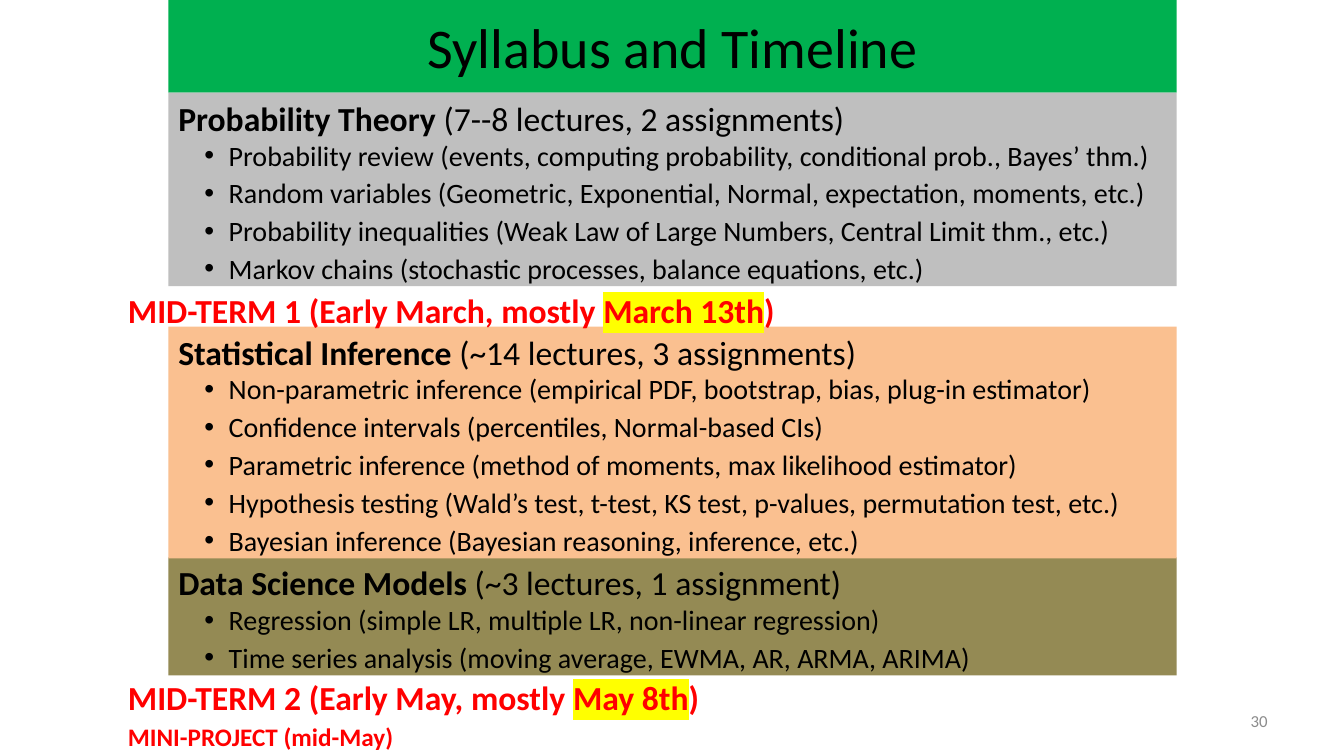
from lxml import etree
from pptx import Presentation
from pptx.dml.color import RGBColor
from pptx.enum.shapes import MSO_SHAPE
from pptx.enum.text import MSO_ANCHOR, MSO_AUTO_SIZE, PP_ALIGN
from pptx.oxml.ns import qn
from pptx.util import Inches, Pt

FONT = "Calibri"
LEFT, WIDTH = 1.67, 10

UNITS = [
    ((LEFT, 0.92, WIDTH, 1.92), "BFBFBF",
     "Probability Theory ", "(7--8 lectures, 2 assignments)", [
         "Probability review (events, computing probability, conditional prob., Bayes’ thm.)",
         "Random variables (Geometric, Exponential, Normal, expectation, moments, etc.)",
         "Probability inequalities (Weak Law of Large Numbers, Central Limit thm., etc.)",
         "Markov chains (stochastic processes, balance equations, etc.)"]),
    ((LEFT, 3.24, WIDTH, 2.3), "FAC090",
     "Statistical Inference", " (~14 lectures, 3 assignments)", [
         "Non-parametric inference (empirical PDF, bootstrap, bias, plug-in estimator)",
         "Confidence intervals (percentiles, Normal-based CIs)",
         "Parametric inference (method of moments, max likelihood estimator)",
         "Hypothesis testing (Wald’s test, t-test, KS test, p-values, permutation test, etc.)",
         "Bayesian inference (Bayesian reasoning, inference, etc.)"]),
    ((LEFT, 5.53, WIDTH, 1.17), "948A54",
     "Data Science Models ", "(~3 lectures, 1 assignment)", [
         "Regression (simple LR, multiple LR, non-linear regression)",
         "Time series analysis (moving average, EWMA, AR, ARMA, ARIMA)"]),
]

# Box, text size, and (text, highlighted) pieces
MILESTONES = [
    ((1.17, 2.83, 7.25, 0.5), 24,
     [("MID-TERM 1 (Early March, mostly ", False), ("March 13th", True), (")", False)]),
    ((1.17, 6.67, 6.42, 0.5), 24,
     [("MID-TERM 2 (Early May, mostly ", False), ("May 8th", True), (")", False)]),
    ((1.17, 7.11, 4.42, 0.4), 18, [("MINI-PROJECT (mid-May)", False)]),
]


def rgb(value):
    return RGBColor.from_string(value)


def inches(box):
    return [Inches(v) for v in box]


def add_run(p, text, size, color="000000", bold=False):
    r = p.add_run()
    r.text = text
    for name, value in {"name": FONT, "size": Pt(size), "bold": bold}.items():
        setattr(r.font, name, value)
    r.font.color.rgb = rgb(color)
    return r


def highlight(r, color):
    fill = r.font._element.find(qn("a:solidFill"))
    mark = etree.Element(qn("a:highlight"))
    etree.SubElement(mark, qn("a:srgbClr"), val=color)
    fill.addnext(mark)


def add_bullet(p):
    p.level = 1
    p.space_after = Pt(3)
    pPr = p._p.get_or_add_pPr()
    pPr.set("marL", str(Inches(0.5)))
    pPr.set("indent", str(Inches(-0.24)))
    etree.SubElement(pPr, qn("a:buFont"), typeface="Arial")
    etree.SubElement(pPr, qn("a:buChar"), char="•")


def add_title(s, box, text):
    sp = s.shapes.title
    sp.left, sp.top, sp.width, sp.height = inches(box)
    sp.fill.solid()
    sp.fill.fore_color.rgb = rgb("00B050")
    tf = sp.text_frame
    tf.auto_size = MSO_AUTO_SIZE.NONE
    tf.vertical_anchor = MSO_ANCHOR.MIDDLE
    p = tf.paragraphs[0]
    p.alignment = PP_ALIGN.CENTER
    add_run(p, text, 40)


def add_unit(s, box, color, name, load, topics):
    sp = s.shapes.add_shape(MSO_SHAPE.RECTANGLE, *inches(box))
    sp.shadow.inherit = False
    sp.fill.solid()
    sp.fill.fore_color.rgb = rgb(color)
    sp.line.fill.background()
    tf = sp.text_frame
    tf.word_wrap = True
    tf.vertical_anchor = MSO_ANCHOR.TOP
    # Heading
    p = tf.paragraphs[0]
    p.alignment = PP_ALIGN.LEFT
    add_run(p, name, 24, bold=True)
    add_run(p, load, 24)
    # Topics
    for topic in topics:
        p = tf.add_paragraph()
        p.alignment = PP_ALIGN.LEFT
        add_bullet(p)
        add_run(p, topic, 20)


def add_milestone(s, box, size, pieces):
    tf = s.shapes.add_textbox(*inches(box)).text_frame
    tf.word_wrap = True
    tf.auto_size = MSO_AUTO_SIZE.SHAPE_TO_FIT_TEXT
    for text, marked in pieces:
        r = add_run(tf.paragraphs[0], text, size, "FF0000", True)
        if marked:
            highlight(r, "FFFF00")


def add_page_number(s, box, number):
    tf = s.shapes.add_textbox(*inches(box)).text_frame
    tf.word_wrap = True
    tf.vertical_anchor = MSO_ANCHOR.MIDDLE
    p = tf.paragraphs[0]
    p.alignment = PP_ALIGN.RIGHT
    add_run(p, number, 12, "8C8C8C")


def main():
    prs = Presentation()
    prs.slide_width, prs.slide_height = Inches(13.33), Inches(7.5)
    s = prs.slides.add_slide(prs.slide_layouts[5])
    add_title(s, (LEFT, 0, WIDTH, 0.92), "Syllabus and Timeline")
    add_page_number(s, (9.56, 6.95, 3.11, 0.4), "30")
    # Later units lie behind earlier ones
    for unit in reversed(UNITS):
        add_unit(s, *unit)
    for milestone in MILESTONES:
        add_milestone(s, *milestone)
    prs.save("out.pptx")


if __name__ == "__main__":
    main()
